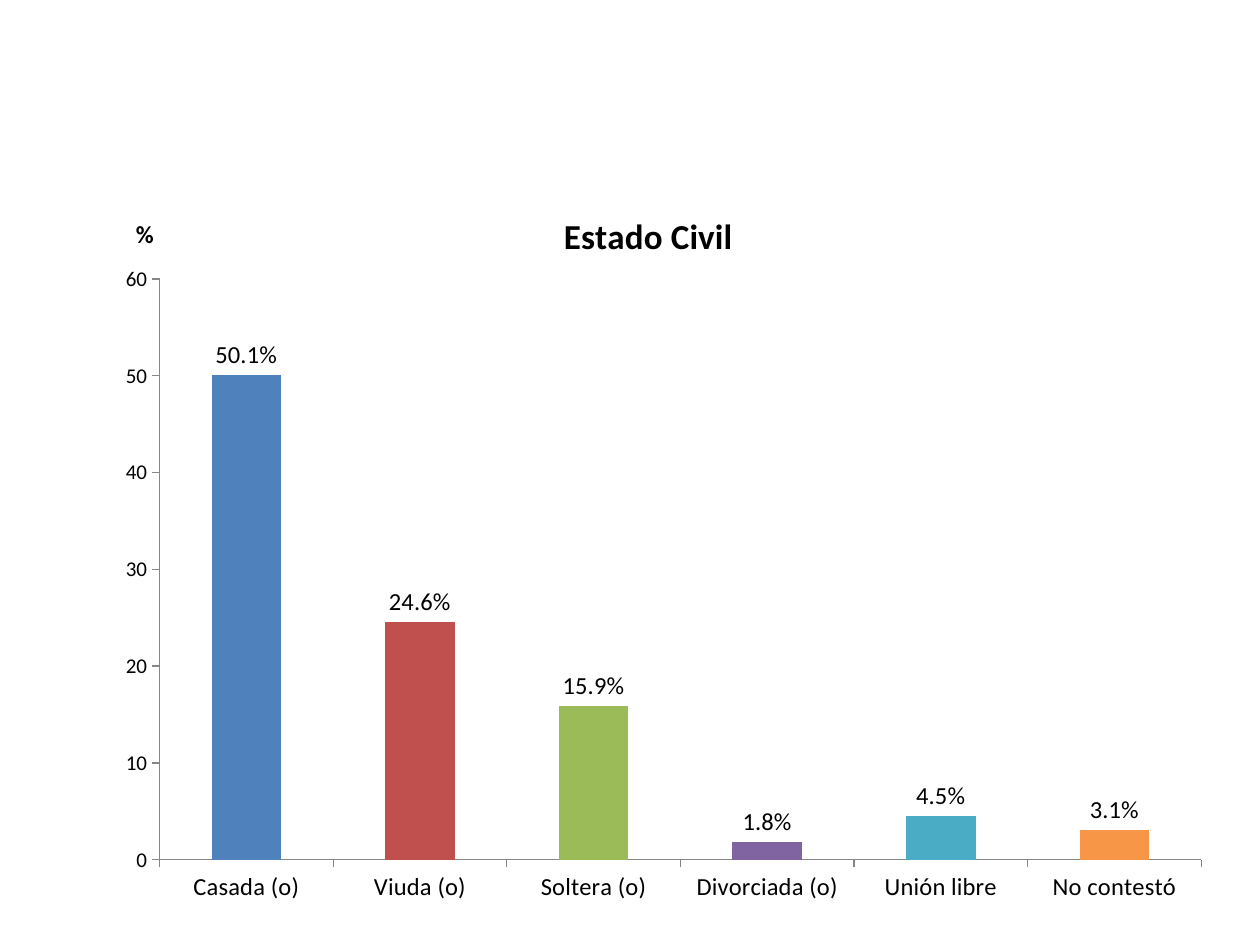
from dataclasses import dataclass

from lxml.etree import SubElement
from pptx import Presentation
from pptx.chart.data import CategoryChartData
from pptx.dml.color import RGBColor
from pptx.enum.chart import XL_CHART_TYPE as ChartType
from pptx.enum.chart import XL_LABEL_POSITION as LabelPosition
from pptx.enum.chart import XL_TICK_MARK as TickMark
from pptx.oxml.ns import qn
from pptx.util import Inches, Pt


@dataclass(frozen=True)
class Theme:
    font: str = "Calibri"
    text: str = "000000"
    axis: str = "868686"
    title_size: int = 20
    label_size: int = 14
    scale_size: int = 12


@dataclass(frozen=True)
class Status:
    name: str
    percent: float
    color: str


@dataclass(frozen=True)
class Area:
    """Place within a parent, as shares of its width and height."""
    x: float
    y: float
    w: float = 0
    h: float = 0


THEME = Theme()
SLIDE_W, SLIDE_H = Inches(10), Inches(7.5)
CHART_AREA = Area(0.043, 0.185, 0.929, 0.788)
PLOT_AREA = Area(0.09, 0.14, 0.89, 0.78)
TITLE_AREA = Area(0.43, 0.04)
UNIT_AREA = Area(0.066, 0.05)
STATUSES = (
    Status("Casada (o)", 50.1, "4F81BD"),
    Status("Viuda (o)", 24.6, "C0504D"),
    Status("Soltera (o)", 15.9, "9BBB59"),
    Status("Divorciada (o)", 1.8, "8064A2"),
    Status("Unión libre", 4.5, "4BACC6"),
    Status("No contestó", 3.1, "F79646"),
)


def style_font(font, size: int, bold: bool = False) -> None:
    font.name, font.size, font.bold = THEME.font, Pt(size), bold
    font.color.rgb = RGBColor.from_string(THEME.text)


def place(element, area: Area, position: int) -> None:
    """Give a chart part a manual layout."""
    for old in element.findall(qn("c:layout")):
        element.remove(old)
    layout = SubElement(element, qn("c:layout"))
    element.insert(position, layout)
    manual = SubElement(layout, qn("c:manualLayout"))
    settings = {"xMode": "edge", "yMode": "edge", "x": area.x, "y": area.y}
    if area.w:
        settings = {"layoutTarget": "inner", **settings, "w": area.w, "h": area.h}
    for tag, value in settings.items():
        SubElement(manual, qn(f"c:{tag}")).set("val", str(value))


def write_title(title, text: str, size: int, area: Area) -> None:
    run = title.text_frame.paragraphs[0].add_run()
    run.text = text
    style_font(run.font, size, bold=True)
    body = title.text_frame._txBody.find(qn("a:bodyPr"))
    body.set("rot", "0")
    body.set("vert", "horz")
    place(title._element, area, 1)


def style_axis(axis, size: int) -> None:
    axis.has_major_gridlines = False
    axis.major_tick_mark, axis.minor_tick_mark = TickMark.OUTSIDE, TickMark.NONE
    axis.format.line.color.rgb = RGBColor.from_string(THEME.axis)
    axis.format.line.width = Pt(0.75)
    style_font(axis.tick_labels.font, size)


def add_status_chart(slide) -> None:
    data = CategoryChartData(number_format="0.0")
    data.categories = [status.name for status in STATUSES]
    data.add_series("Estado Civil", [status.percent for status in STATUSES])
    chart = slide.shapes.add_chart(
        ChartType.COLUMN_CLUSTERED,
        int(SLIDE_W * CHART_AREA.x), int(SLIDE_H * CHART_AREA.y),
        int(SLIDE_W * CHART_AREA.w), int(SLIDE_H * CHART_AREA.h), data,
    ).chart
    style_font(chart.font, 10)
    chart.has_legend = False
    place(chart._chartSpace.chart.plotArea, PLOT_AREA, 0)

    # Title and axes
    chart.has_title = True
    write_title(chart.chart_title, "Estado Civil", THEME.title_size, TITLE_AREA)
    style_axis(chart.category_axis, THEME.label_size)
    scale = chart.value_axis
    style_axis(scale, THEME.scale_size)
    scale.minimum_scale, scale.maximum_scale, scale.major_unit = 0, 60, 10
    scale.tick_labels.number_format = "0"
    scale.tick_labels.number_format_is_linked = False
    scale.has_title = True
    write_title(scale.axis_title, "%", THEME.label_size, UNIT_AREA)

    # Columns and their values
    plot = chart.plots[0]
    plot.gap_width, plot.vary_by_categories = 150, False
    columns = plot.series[0]
    for index, status in enumerate(STATUSES):
        fill = columns.points[index].format.fill
        fill.solid()
        fill.fore_color.rgb = RGBColor.from_string(status.color)
    labels = columns.data_labels
    labels.show_value = True
    labels.number_format, labels.number_format_is_linked = '0.0"%"', False
    labels.position = LabelPosition.OUTSIDE_END
    style_font(labels.font, THEME.label_size)


def main() -> None:
    deck = Presentation()
    deck.slide_width, deck.slide_height = SLIDE_W, SLIDE_H
    blank_layout = deck.slide_layouts[6]
    add_status_chart(deck.slides.add_slide(blank_layout))
    deck.save("out.pptx")


if __name__ == "__main__":
    main()
